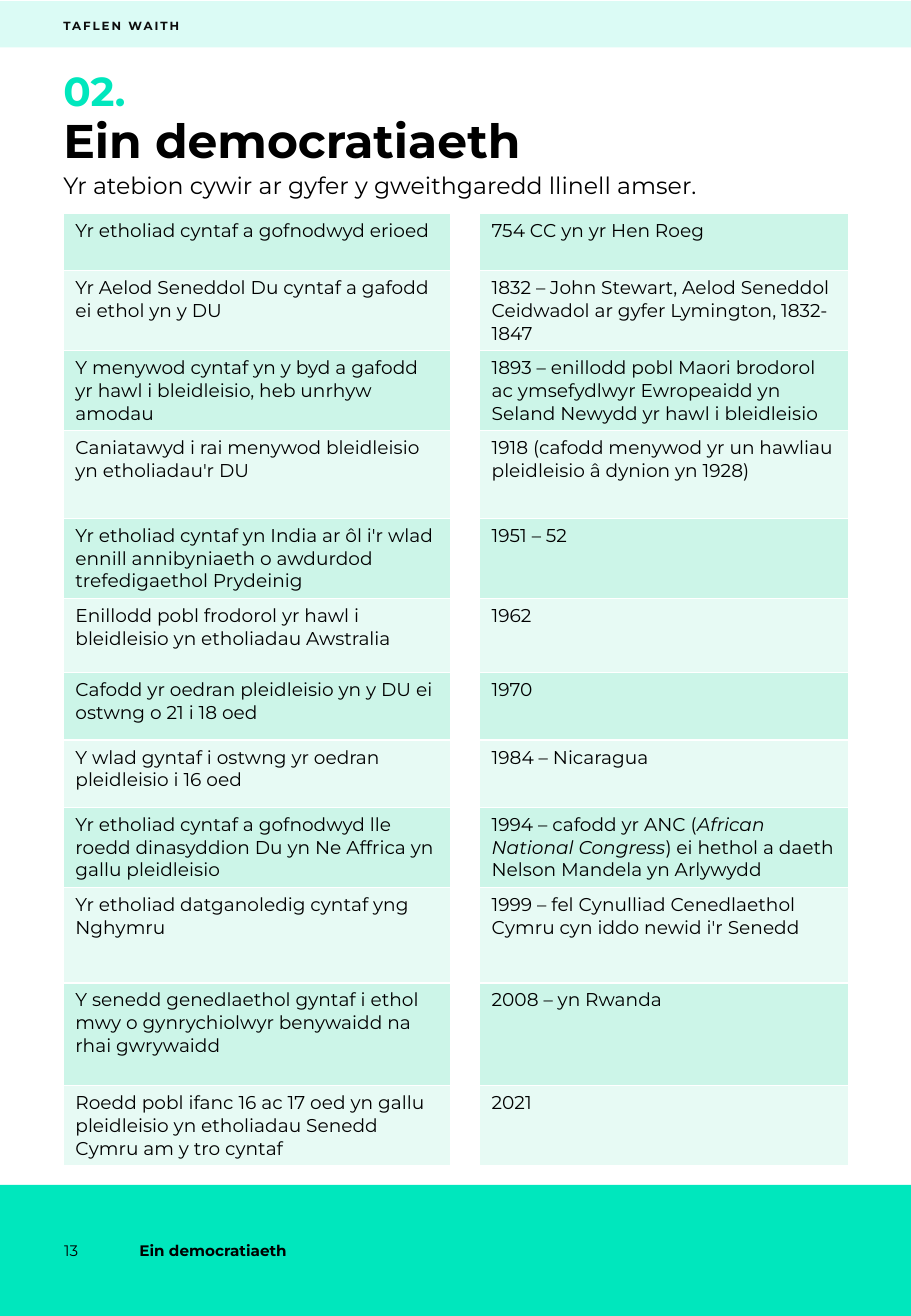
from pptx import Presentation
from pptx import oxml
from pptx import util as u
from pptx.dml import color
from pptx.enum import shapes, text

Pt = u.Pt
NS = 'xmlns:a="http://schemas.openxmlformats.org/drawingml/2006/main"'
MINT = "00E7BD"
ROW_FILLS = ["CCF5E8", "E7FAF4"]


def rgb(value):
    return color.RGBColor.from_string(value)


def write(frame, words, size=11, ink="000000", bold=False, spacing=None, line=1.0,
          margin=None, anchor=text.MSO_ANCHOR.TOP):
    frame.word_wrap = True
    frame.vertical_anchor = anchor
    if margin is not None:
        frame.auto_size = text.MSO_AUTO_SIZE.NONE
        frame.margin_left = frame.margin_right = Pt(margin)
        frame.margin_top = frame.margin_bottom = Pt(margin)
    paragraph = frame.paragraphs[0]
    properties = paragraph._p.get_or_add_pPr()
    properties.set("marL", "0")
    properties.set("indent", "0")
    properties.append(oxml.parse_xml(f"<a:buNone {NS}/>"))
    paragraph.alignment = text.PP_ALIGN.LEFT
    paragraph.line_spacing = line
    paragraph.space_before = paragraph.space_after = Pt(0)
    for index, part in enumerate(words.split("*")):
        run = paragraph.add_run()
        run.text = part
        run.font.name = "Montserrat"
        run.font.size = Pt(size)
        run.font.bold = bold
        run.font.italic = index % 2 == 1
        run.font.color.rgb = rgb(ink)
        if spacing:
            run.font._element.set("spc", str(round(spacing * 100)))


presentation = Presentation()
presentation.slide_width = Pt(540)
presentation.slide_height = Pt(780.48)
slide = presentation.slides.add_slide(presentation.slide_layouts[4])
title = slide.shapes.title
subtitle, number, header, spare = [slide.placeholders[index] for index in (1, 2, 3, 4)]
spare.element.getparent().remove(spare.element)

for top, height, opacity in [(702.72, 77.76, 100), (0.72, 27.36, 14)]:
    band = slide.shapes.add_shape(shapes.MSO_SHAPE.RECTANGLE, 0, Pt(top), Pt(540), Pt(height))
    band.shadow.inherit = False
    band.line.fill.background()
    band.fill.solid()
    band.fill.fore_color.rgb = rgb(MINT)
    if opacity < 100:
        tint = band.element.spPr.find(".//{*}srgbClr")
        tint.append(oxml.parse_xml(f'<a:alpha {NS} val="{opacity * 1000}"/>'))
    title.element.addprevious(band.element)

headings = [
    (title, "Ein democratiaeth", 69.84, 465, 63.36, dict(size=28, bold=True, line=0.9)),
    (subtitle, "Yr atebion cywir ar gyfer y gweithgaredd llinell amser.", 101.52, 465, 50.4,
     dict(size=14)),
    (number, "02.", 38.88, 465, 26.64, dict(size=24, ink=MINT, bold=True)),
    (header, "TAFLEN WAITH", 5.04, 194.4, 20.16,
     dict(size=7, ink="0D0D0D", bold=True, spacing=1.2, anchor=text.MSO_ANCHOR.MIDDLE)),
]
for shape, words, top, width, height, style in headings:
    shape.left, shape.top, shape.width, shape.height = Pt(37.5), Pt(top), Pt(width), Pt(height)
    write(shape.text_frame, words, margin=0, **style)

for words, left, width, bold in [("Ein democratiaeth", 75.6, 199.44, True),
                                 ("13", 30.96, 44.64, False)]:
    footer = slide.shapes.add_textbox(Pt(left), Pt(702.72), Pt(width), Pt(77.76))
    write(footer.text_frame, words, size=9, bold=bold, anchor=text.MSO_ANCHOR.MIDDLE)

timeline = [
    (34, "Yr etholiad cyntaf a gofnodwyd erioed", "754 CC yn yr Hen Roeg"),
    (47.5, "Yr Aelod Seneddol Du cyntaf a gafodd ei ethol yn y DU",
     "1832 – John Stewart, Aelod Seneddol Ceidwadol ar gyfer Lymington, 1832-1847"),
    (47.5, "Y menywod cyntaf yn y byd a gafodd yr hawl i bleidleisio, heb unrhyw amodau",
     "1893 – enillodd pobl Maori brodorol ac ymsefydlwyr Ewropeaidd yn Seland Newydd "
     "yr hawl i bleidleisio"),
    (52, "Caniatawyd i rai menywod bleidleisio yn etholiadau'r DU",
     "1918 (cafodd menywod yr un hawliau pleidleisio â dynion yn 1928)"),
    (47.5, "Yr etholiad cyntaf yn India ar ôl i'r wlad ennill annibyniaeth o awdurdod "
     "trefedigaethol Prydeinig", "1951 – 52"),
    (44, "Enillodd pobl frodorol yr hawl i bleidleisio yn etholiadau Awstralia", "1962"),
    (40, "Cafodd yr oedran pleidleisio yn y DU ei ostwng o 21 i 18 oed", "1970"),
    (40, "Y wlad gyntaf i ostwng yr oedran pleidleisio i 16 oed", "1984 – Nicaragua"),
    (47.5, "Yr etholiad cyntaf a gofnodwyd lle roedd dinasyddion Du yn Ne Affrica yn gallu "
     "pleidleisio",
     "1994 – cafodd yr ANC (*African National Congress*) ei hethol a daeth Nelson Mandela "
     "yn Arlywydd"),
    (56.5, "Yr etholiad datganoledig cyntaf yng Nghymru",
     "1999 – fel Cynulliad Cenedlaethol Cymru cyn iddo newid i'r Senedd"),
    (61, "Y senedd genedlaethol gyntaf i ethol mwy o gynrychiolwyr benywaidd na rhai gwrywaidd",
     "2008 – yn Rwanda"),
    (47.5, "Roedd pobl ifanc 16 ac 17 oed yn gallu pleidleisio yn etholiadau Senedd Cymru "
     "am y tro cyntaf", "2021"),
]
table_height = sum(height for height, event, answer in timeline)
table = slide.shapes.add_table(len(timeline), 3, Pt(37.5), Pt(126.5), Pt(465),
                               Pt(table_height)).table
table.first_row = table.horz_banding = False
for column, width in zip(table.columns, (229.5, 16.5, 219)):
    column.width = Pt(width)

for index, (height, event, answer) in enumerate(timeline):
    row = table.rows[index]
    row.height = Pt(height)
    for cell, words in zip(row.cells, (event, "", answer)):
        properties = cell._tc.get_or_add_tcPr()
        for side in ("lnL", "lnR", "lnT", "lnB"):
            properties.append(oxml.parse_xml(
                f'<a:{side} {NS} w="12700"><a:solidFill><a:srgbClr val="FFFFFF"/>'
                f'</a:solidFill></a:{side}>'))
        if words:
            cell.fill.solid()
            cell.fill.fore_color.rgb = rgb(ROW_FILLS[index % 2])
            write(cell.text_frame, words)
        else:
            cell.fill.background()

presentation.save("out.pptx")
